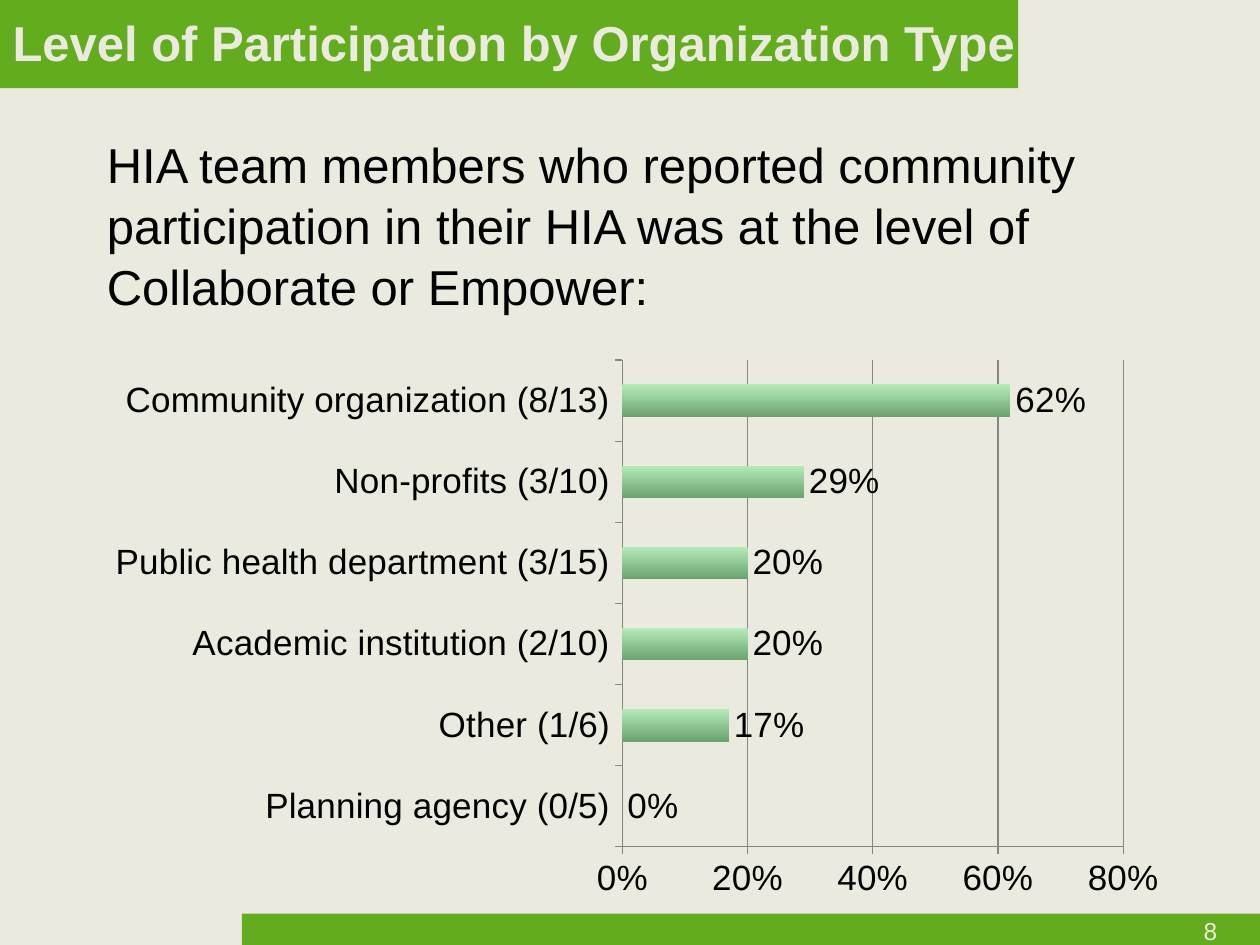
from dataclasses import dataclass

from lxml.etree import SubElement
from pptx import Presentation
from pptx.chart.data import CategoryChartData
from pptx.dml.color import RGBColor
from pptx.enum.chart import XL_CHART_TYPE, XL_LABEL_POSITION, XL_TICK_MARK
from pptx.enum.shapes import MSO_SHAPE
from pptx.enum.text import MSO_ANCHOR, PP_ALIGN
from pptx.oxml.ns import qn
from pptx.util import Inches, Pt


@dataclass(frozen=True)
class Theme:
    font: str = "Arial"
    paper: RGBColor = RGBColor.from_string("EAEBDE")
    green: RGBColor = RGBColor.from_string("63AC1D")
    ink: RGBColor = RGBColor.from_string("000000")
    grid: RGBColor = RGBColor.from_string("868686")
    bar_top: RGBColor = RGBColor.from_string("B5EBB9")
    bar_bottom: RGBColor = RGBColor.from_string("6AA36F")
    heading: int = 28
    chart: int = 20
    number: int = 14


THEME = Theme()

PARTICIPATION = {
    "Planning agency (0/5)": 0,
    "Other (1/6)": 0.17,
    "Academic institution (2/10)": 0.2,
    "Public health department (3/15)": 0.2,
    "Non-profits (3/10)": 0.29,
    "Community organization (8/13)": 0.62,
}


def set_font(font, size, color, bold=False):
    font.name = THEME.font
    font.size = Pt(size)
    font.bold = bold
    font.color.rgb = color


def write(sp, text, size=THEME.heading, color=THEME.ink, bold=False,
          align=PP_ALIGN.LEFT, anchor=MSO_ANCHOR.TOP, spacing=1.0):
    tf = sp.text_frame
    tf.word_wrap = True
    tf.vertical_anchor = anchor
    p = tf.paragraphs[0]
    p.alignment = align
    p.line_spacing = spacing
    r = p.add_run()
    r.text = text
    set_font(r.font, size, color, bold)


def add_box(slide, x, y, w, h, text, **fmt):
    sp = slide.shapes.add_textbox(Inches(x), Inches(y), Inches(w), Inches(h))
    write(sp, text, **fmt)


def add_band(slide, x, y, w, h):
    sp = slide.shapes.add_shape(MSO_SHAPE.RECTANGLE, Inches(x), Inches(y),
                                Inches(w), Inches(h))
    sp.shadow.inherit = False
    sp.fill.solid()
    sp.fill.fore_color.rgb = THEME.green
    sp.line.fill.background()


def add_title(slide, text):
    title = slide.shapes.title
    title.left, title.top = Inches(0), Inches(0)
    title.width, title.height = Inches(8.39), Inches(0.67)
    write(title, text, color=THEME.paper, bold=True, anchor=MSO_ANCHOR.MIDDLE)
    slide.shapes._spTree.append(title._element)  # in front of the band


def set_plot_area(chart, **fractions):
    plot_area = chart._chartSpace.chart.plotArea
    layout = plot_area.find(qn("c:layout"))
    if layout is None:
        layout = SubElement(plot_area, qn("c:layout"))
        plot_area.insert(0, layout)
    manual = SubElement(layout, qn("c:manualLayout"))
    settings = {"layoutTarget": "inner", "xMode": "edge", "yMode": "edge",
                **fractions}
    for tag, value in settings.items():
        SubElement(manual, qn(f"c:{tag}")).set("val", str(value))


def style_axis(axis):
    axis.major_tick_mark = XL_TICK_MARK.OUTSIDE
    axis.minor_tick_mark = XL_TICK_MARK.NONE
    axis.format.line.color.rgb = THEME.grid
    axis.format.line.width = Pt(0.75)


def add_bar_chart(slide, x, y, w, h, values):
    data = CategoryChartData(number_format="0%")
    data.categories = list(values)
    data.add_series("Series 1", list(values.values()))
    chart = slide.shapes.add_chart(XL_CHART_TYPE.BAR_CLUSTERED, Inches(x),
                                   Inches(y), Inches(w), Inches(h), data).chart
    chart.has_legend = False
    chart.has_title = False
    set_font(chart.font, THEME.chart, THEME.ink)
    set_plot_area(chart, x=0.485, y=0.02, w=0.46, h=0.87)

    # Axes and gridlines
    style_axis(chart.category_axis)
    axis = chart.value_axis
    style_axis(axis)
    axis.minimum_scale, axis.maximum_scale, axis.major_unit = 0, 0.8, 0.2
    axis.tick_labels.number_format = "0%"
    axis.tick_labels.number_format_is_linked = False
    axis.has_major_gridlines = True
    axis.major_gridlines.format.line.color.rgb = THEME.grid
    axis.major_gridlines.format.line.width = Pt(0.75)

    # Bars and value labels
    plot = chart.plots[0]
    plot.gap_width = 150
    plot.vary_by_categories = False
    fill = plot.series[0].format.fill
    fill.gradient()
    fill.gradient_angle = 270
    for stop, color in zip(fill.gradient_stops,
                           (THEME.bar_top, THEME.bar_bottom)):
        stop.color.rgb = color
    plot.has_data_labels = True
    labels = plot.data_labels
    labels.show_value = True
    labels.number_format = "0%"
    labels.number_format_is_linked = False
    labels.position = XL_LABEL_POSITION.OUTSIDE_END
    set_font(labels.font, THEME.chart, THEME.ink)


def main():
    prs = Presentation()
    prs.slide_width, prs.slide_height = Inches(10), Inches(7.5)
    slide = prs.slides.add_slide(prs.slide_layouts[5])
    slide.background.fill.solid()
    slide.background.fill.fore_color.rgb = THEME.paper

    # Header and footer bands
    add_band(slide, 1.92, 7.25, 8.08, 0.25)
    add_band(slide, 0, 0, 8.08, 0.7)
    add_title(slide, "Level of Participation by Organization Type")

    # Introduction
    add_box(slide, 0.75, 1, 8.5, 1.6,
            "HIA team members who reported community participation in their "
            "HIA was at the level of Collaborate or Empower:", spacing=1.04)

    # Slide number
    add_box(slide, 7.68, 7.22, 2.08, 0.25, "8", size=THEME.number,
            color=THEME.paper, align=PP_ALIGN.RIGHT)

    # Participation by organization type
    add_bar_chart(slide, 0.75, 2.77, 8.64, 4.44, PARTICIPATION)

    prs.save("out.pptx")


if __name__ == "__main__":
    main()
